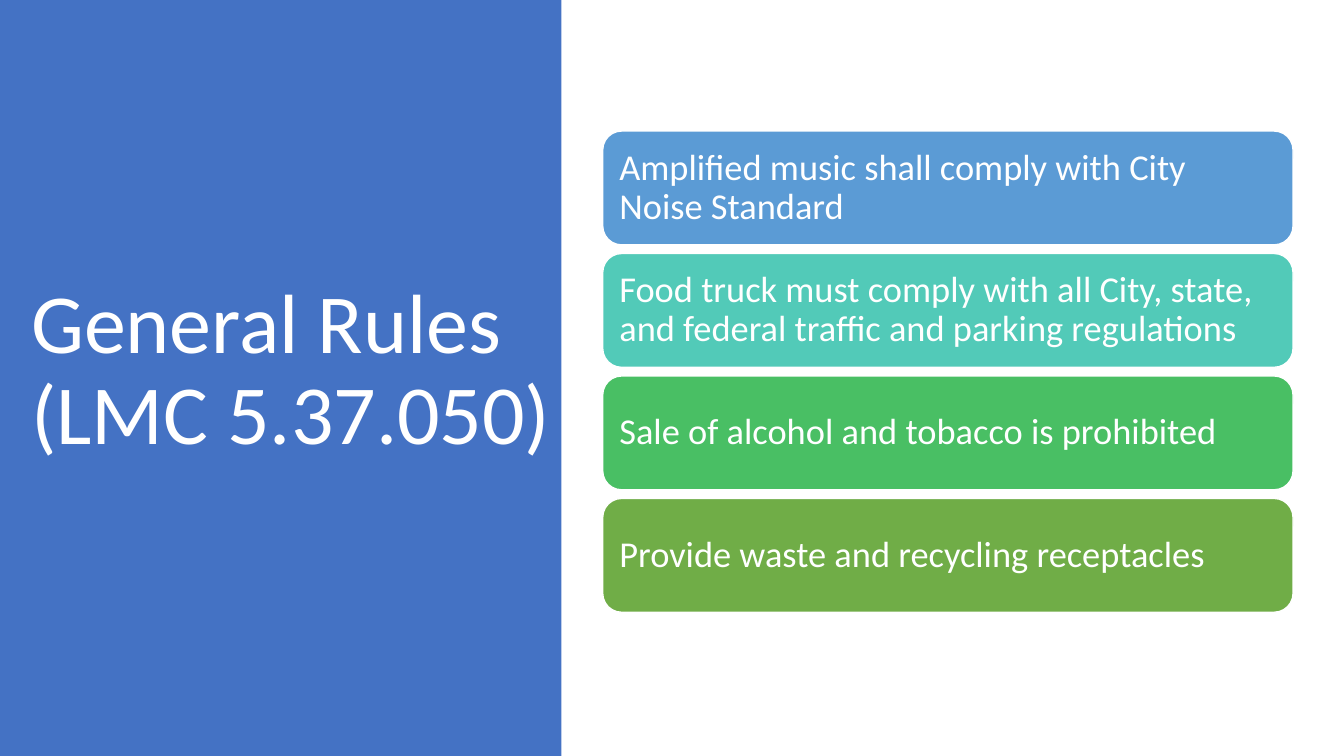
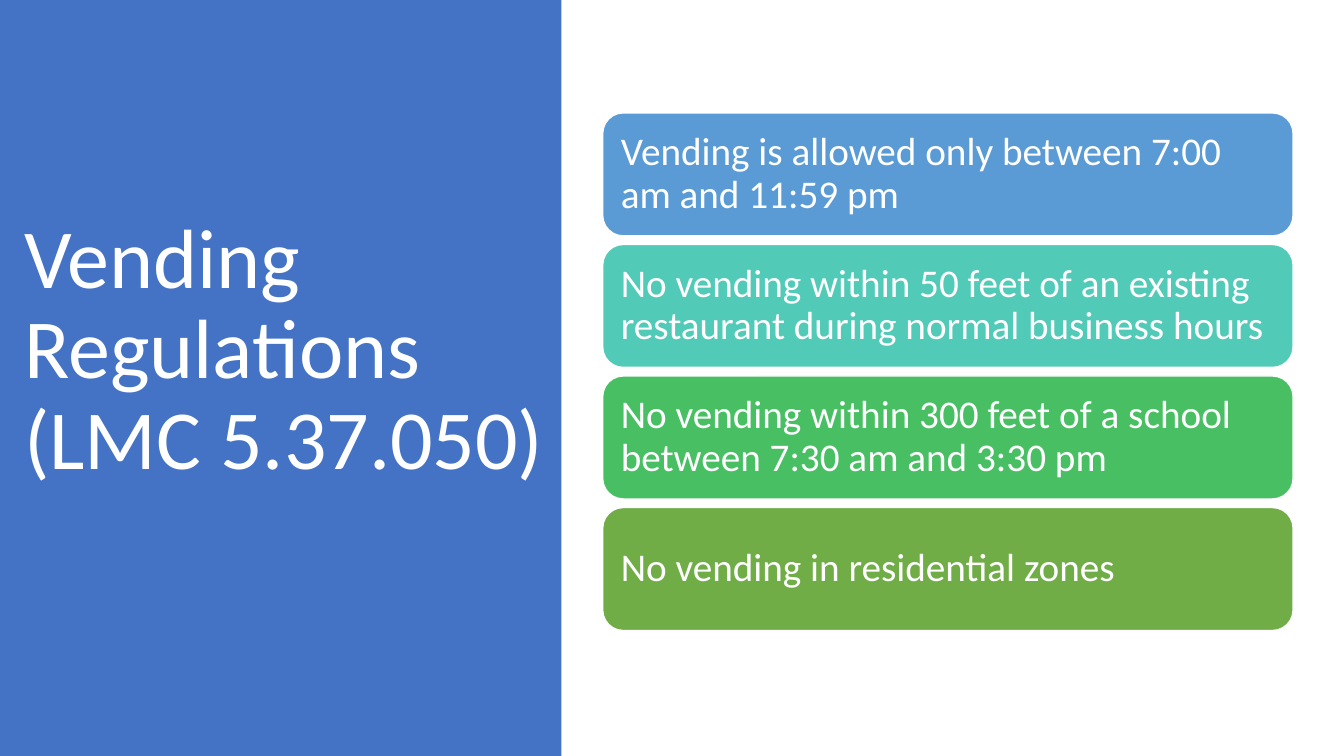
from pptx import Presentation
from pptx.dml.color import RGBColor
from pptx.enum.shapes import MSO_SHAPE
from pptx.enum.text import MSO_ANCHOR, MSO_AUTO_SIZE, PP_ALIGN
from pptx.util import Pt

EMU_PER_PX = 4572  # 200 px to the inch
SLIDE_WIDTH, SLIDE_HEIGHT = 2667, 1500
PANEL_WIDTH = 1114
CARD_LEFT, CARD_WIDTH, CARD_GAP = 1196, 1370, 17
STACK_MIDDLE_TWICE = 1475  # sum of the top and bottom edges of every card stack

FONT = "Calibri"
WHITE = RGBColor(0xFF, 0xFF, 0xFF)
PANEL_BLUE = RGBColor(0x44, 0x72, 0xC4)
CARD_COLORS = [
    RGBColor(0x5B, 0x9B, 0xD5),
    RGBColor(0x52, 0xCA, 0xB8),
    RGBColor(0x49, 0xBF, 0x64),
    RGBColor(0x70, 0xAD, 0x47),
]


def px(length):
    return length * EMU_PER_PX


def write_lines(frame, lines, size):
    """Write white, left-aligned lines as one vertically centred paragraph."""
    frame.word_wrap = True
    frame.auto_size = MSO_AUTO_SIZE.NONE
    frame.vertical_anchor = MSO_ANCHOR.MIDDLE
    paragraph = frame.paragraphs[0]
    paragraph.alignment = PP_ALIGN.LEFT
    paragraph.line_spacing = 0.9
    for index, line in enumerate(lines):
        if index:
            paragraph.add_line_break()
        run = paragraph.add_run()
        run.text = line
        run.font.name = FONT
        run.font.size = Pt(size)
        run.font.color.rgb = WHITE


def add_block(slide, kind, box, color):
    block = slide.shapes.add_shape(kind, *map(px, box))
    block.shadow.inherit = False
    block.fill.solid()
    block.fill.fore_color.rgb = color
    block.line.fill.background()
    return block


def add_title_panel(slide, lines, box):
    """Place the title on the blue panel at the left of the slide."""
    panel = add_block(slide, MSO_SHAPE.RECTANGLE,
                      (0, 0, PANEL_WIDTH, SLIDE_HEIGHT), PANEL_BLUE)
    title = slide.shapes.title
    title._element.addprevious(panel._element)
    title.left, title.top, title.width, title.height = map(px, box)
    write_lines(title.text_frame, lines, 60)


def add_rule_cards(slide, rules, height, inset, size):
    stack_height = len(rules) * (height + CARD_GAP) - CARD_GAP
    top = (STACK_MIDDLE_TWICE - stack_height) // 2
    for rule, color in zip(rules, CARD_COLORS):
        card = add_block(slide, MSO_SHAPE.ROUNDED_RECTANGLE,
                         (CARD_LEFT, top, CARD_WIDTH, height), color)
        card.line.color.rgb = WHITE
        card.line.width = Pt(1)
        frame = card.text_frame
        frame.margin_left = frame.margin_right = px(inset)
        frame.margin_top = frame.margin_bottom = px(inset)
        write_lines(frame, [rule], size)
        top += height + CARD_GAP


def main():
    deck = Presentation()
    deck.slide_width, deck.slide_height = px(SLIDE_WIDTH), px(SLIDE_HEIGHT)
    title_only = deck.slide_layouts[5]

    general = deck.slides.add_slide(title_only)
    add_title_panel(general, ["General Rules", "(LMC 5.37.050)"],
                    (42, 136, 1114, 1204))
    add_rule_cards(general, [
        "Amplified music shall comply with City Noise Standard",
        "Food truck must comply with all City, state, and federal traffic "
        "and parking regulations",
        "Sale of alcohol and tobacco is prohibited",
        "Provide waste and recycling receptacles",
    ], height=226, inset=22, size=26)

    vending = deck.slides.add_slide(title_only)
    add_title_panel(vending, ["Vending Regulations", "(LMC 5.37.050)"],
                    (28, 96, 1086, 1204))
    add_rule_cards(vending, [
        "Vending is allowed only between 7:00 am and 11:59 pm",
        "No vending within 50 feet of an existing restaurant during normal "
        "business hours",
        "No vending within 300 feet of a school between 7:30 am and 3:30 pm",
        "No vending in residential zones",
    ], height=244, inset=24, size=28)

    deck.save("out.pptx")


if __name__ == "__main__":
    main()
